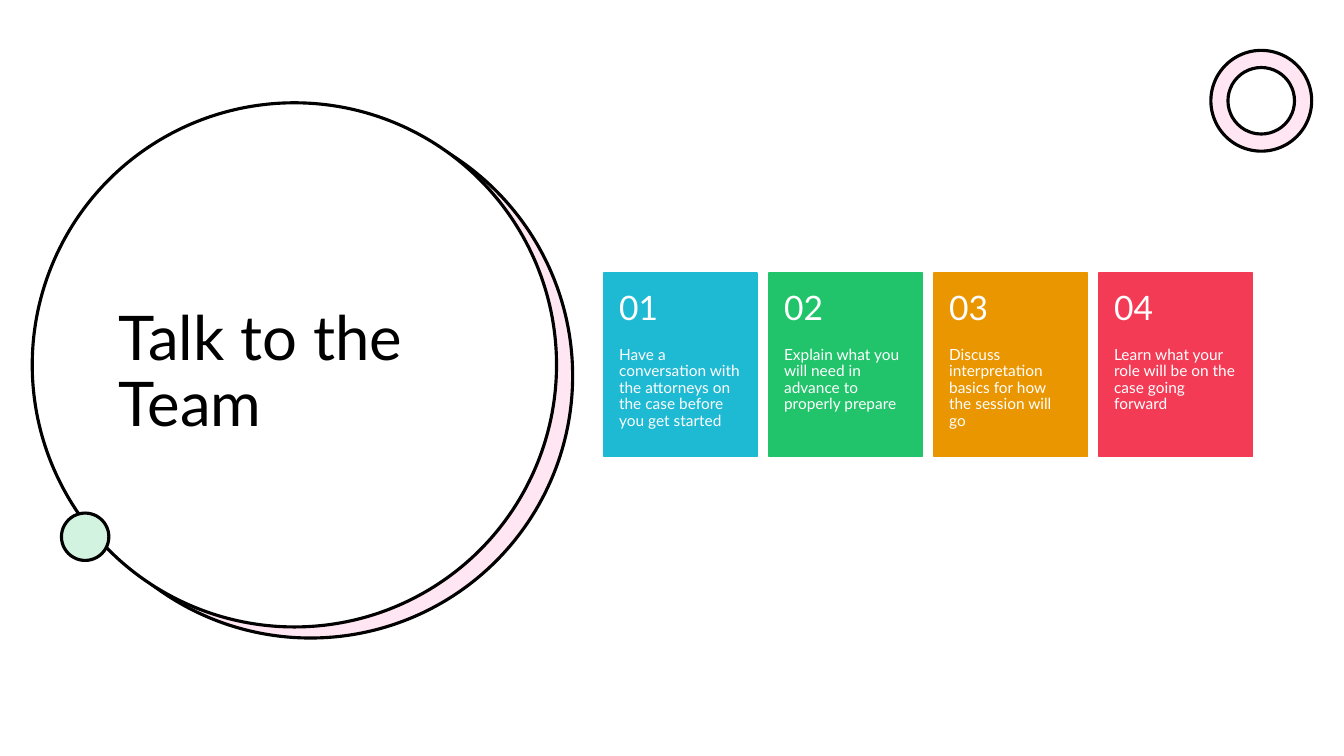
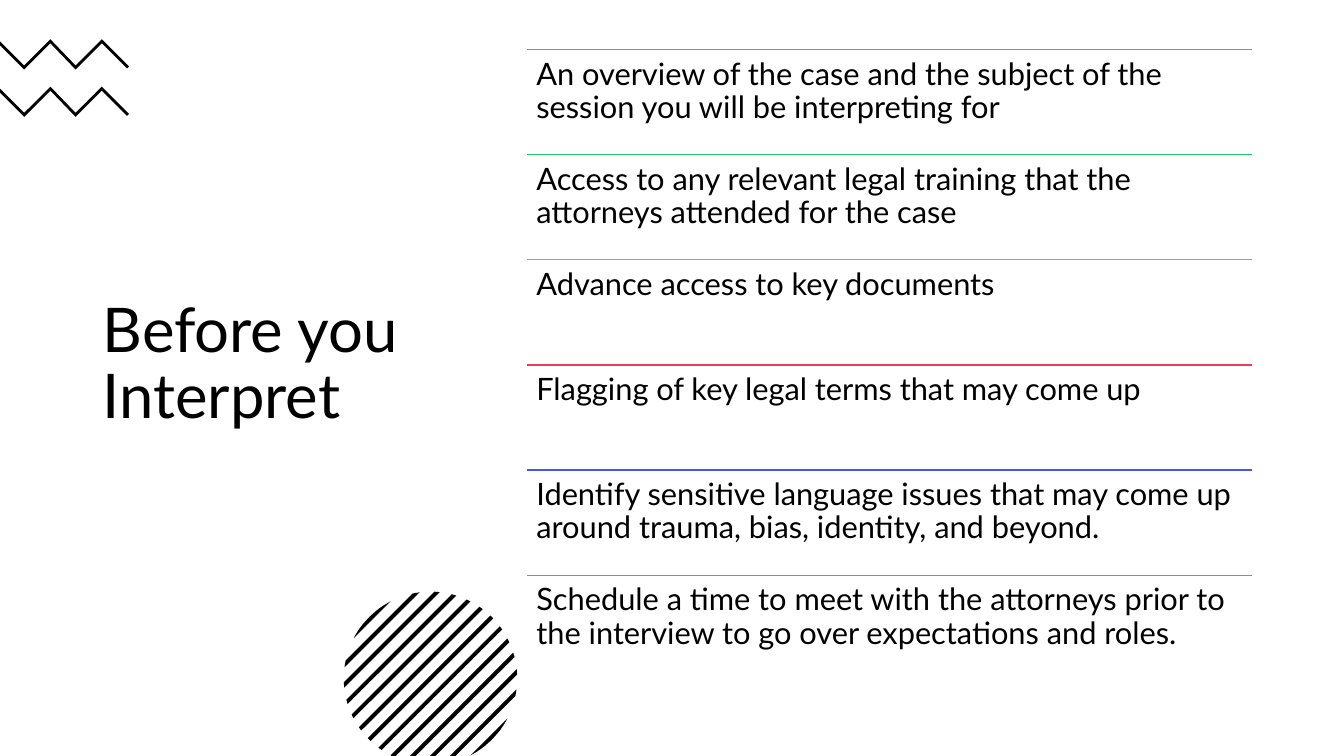
import math

import pptx
import pptx.dml.color
import pptx.enum.shapes
import pptx.enum.text
import pptx.util
from lxml import etree

Inches = pptx.util.Inches
SHAPE = pptx.enum.shapes.MSO_SHAPE
ANCHOR = pptx.enum.text.MSO_ANCHOR
COLORS = {
    "black": "000000", "white": "FFFFFF", "pink": "FFE6F2", "mint": "D3F3E1",
    "cyan": "1EB9D3", "green": "21C46B", "orange": "EA9600",
    "red": "F43B56", "indigo": "4B56E8",
}
ACCENTS = ["cyan", "green", "orange", "red", "indigo"]
FONT = "Lato"
RIGHT_EDGE = 12.42


def rgb(name):
    return pptx.dml.color.RGBColor.from_string(COLORS[name])


def add_text(slide, text, left, top, width, height, size, color="black",
             anchor=ANCHOR.TOP, insets=(0.1, 0.05, 0.1, 0.05)):
    box = slide.shapes.add_textbox(*map(Inches, (left, top, width, height)))
    frame = box.text_frame
    frame.word_wrap = True
    frame.vertical_anchor = anchor
    (frame.margin_left, frame.margin_top,
     frame.margin_right, frame.margin_bottom) = map(Inches, insets)
    paragraph = frame.paragraphs[0]
    paragraph.text = text
    paragraph.line_spacing = 0.9
    paragraph.font.size = pptx.util.Pt(size)
    paragraph.font.name = FONT
    paragraph.font.color.rgb = rgb(color)


def paint(shape, fill, line=None, weight=1):
    shape.shadow.inherit = False
    shape.fill.solid()
    shape.fill.fore_color.rgb = rgb(fill)
    if line:
        shape.line.color.rgb = rgb(line)
        shape.line.width = pptx.util.Pt(weight)
    else:
        shape.line.fill.background()


deck = pptx.Presentation()
deck.slide_width = Inches(13.33)
deck.slide_height = Inches(7.5)
team_slide, before_slide = [deck.slides.add_slide(deck.slide_layouts[6]) for _ in range(2)]

circles = [
    (SHAPE.OVAL, 0.48, 1.13, 5.2, "pink"),
    (SHAPE.OVAL, 0.32, 1.02, 5.2, "white"),
    (SHAPE.DONUT, 12.01, 0.5, 1, "pink"),
    (SHAPE.OVAL, 0.61, 5.09, 0.47, "mint"),
]
for kind, left, top, diameter, fill in circles:
    circle = team_slide.shapes.add_shape(
        kind, Inches(left), Inches(top), Inches(diameter), Inches(diameter))
    if kind == SHAPE.DONUT:
        circle.adjustments[0] = 0.17
    paint(circle, fill, "black", 2.25)

steps = [
    "Have a conversation with the attorneys on the case before you get started",
    "Explain what you will need in advance to properly prepare",
    "Discuss interpretation basics for how the session will go",
    "Learn what your role will be on the case going forward",
]
card_left, card_top, card_width, card_height = 5.99, 2.71, 1.52, 1.82
number_height = 0.73
card_pitch = (RIGHT_EDGE - card_left - card_width) / (len(steps) - 1)
for index, step in enumerate(steps):
    left = card_left + index * card_pitch
    card = team_slide.shapes.add_shape(
        SHAPE.RECTANGLE, *map(Inches, (left, card_top, card_width, card_height)))
    paint(card, ACCENTS[index], ACCENTS[index])
    add_text(team_slide, step, left, card_top + number_height, card_width,
             card_height - number_height, size=11, color="white",
             insets=(0.15, 0, 0.15, 0.36))
    add_text(team_slide, f"{index + 1:02}", left, card_top, card_width, number_height,
             size=24, color="white", anchor=ANCHOR.MIDDLE,
             insets=(0.15, 0.18, 0.15, 0.18))

outlines = []
center_x, center_y, radius = 4.27, 6.73, 0.86
stripe_pitch, stripe_width = 0.14, 0.04
diagonal = math.sqrt(0.5)
for stripe in range(-6, 7):
    upper_ends, lower_ends = [], []
    for step in range(9):
        offset = stripe * stripe_pitch + stripe_width * (step / 8 - 0.5)
        offset = max(-radius, min(radius, offset))
        reach = math.sqrt(radius ** 2 - offset ** 2)
        lower_reach = min(reach, (7.5 - center_y) / diagonal - offset)
        for ends, along in ((upper_ends, reach), (lower_ends, -lower_reach)):
            ends.append((center_x + (offset + along) * diagonal,
                         center_y + (offset - along) * diagonal))
    outlines.append(upper_ends + lower_ends[::-1])

zigzag = [
    (0.5, 0), (0.75, 0.26), (1.01, 0), (1.28, 0.27), (1.26, 0.29), (1.01, 0.04),
    (0.75, 0.3), (0.5, 0.04), (0.24, 0.3), (0, 0.06), (0, 0.02), (0.24, 0.26),
]
for zigzag_top in (0.39, 0.86):
    outlines.append([(x, y + zigzag_top) for x, y in zigzag])

for outline in outlines:
    points = [(Inches(x), Inches(y)) for x, y in outline]
    builder = before_slide.shapes.build_freeform(*points[0])
    builder.add_line_segments(points[1:], close=True)
    paint(builder.convert_to_shape(), "black")

needs = [
    "An overview of the case and the subject of the session you will be interpreting for",
    "Access to any relevant legal training that the attorneys attended for the case",
    "Advance access to key documents",
    "Flagging of key legal terms that may come up",
    "Identify sensitive language issues that may come up around trauma, bias, identity, and beyond.",
    "Schedule a time to meet with the attorneys prior to the interview to go over expectations and roles.",
]
list_left, list_top, list_bottom = 5.23, 0.49, 6.75
row_height = (list_bottom - list_top) / len(needs)
for index, need in enumerate(needs):
    top = list_top + index * row_height
    rule = before_slide.shapes.add_connector(
        pptx.enum.shapes.MSO_CONNECTOR.STRAIGHT,
        *map(Inches, (list_left, top, RIGHT_EDGE, top)))
    rule.line.color.rgb = rgb(ACCENTS[index % len(ACCENTS)])
    rule.line.width = pptx.util.Pt(1)
    etree.SubElement(rule.element.spPr, pptx.oxml.ns.qn("a:effectLst"))
    add_text(before_slide, need, list_left, top, RIGHT_EDGE - list_left, row_height,
             size=22, insets=(0.09, 0.09, 0.09, 0.09))

titles = [
    (team_slide, "Talk to the Team", 1.08, 1.85, 3.71),
    (before_slide, "Before you Interpret", 0.92, 1.31, 4.63),
]
for slide, title, left, top, height in titles:
    add_text(slide, title, left, top, 3.5, height, size=44, anchor=ANCHOR.MIDDLE)

deck.save("out.pptx")
